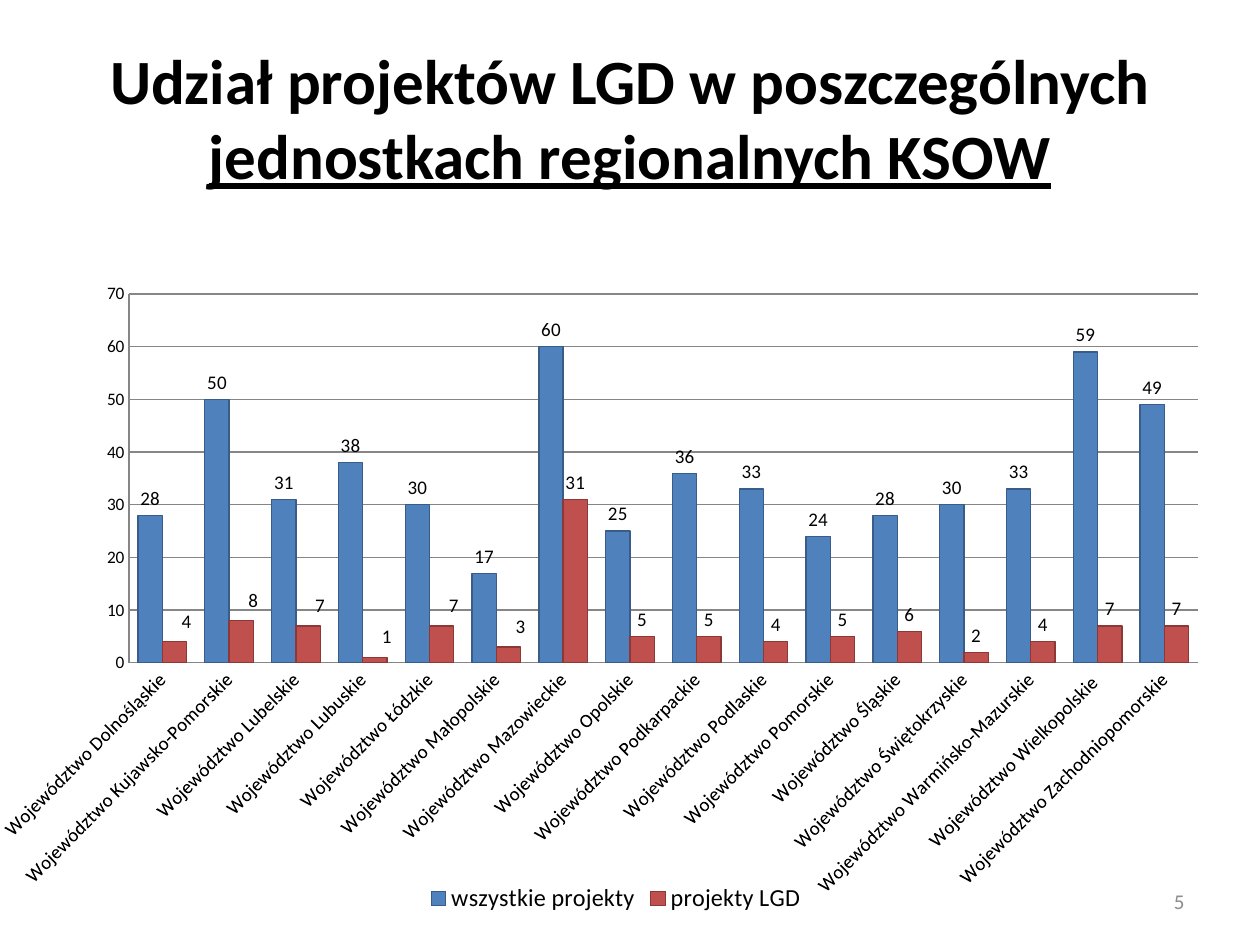
import pptx
import pptx.chart.data
import pptx.dml.color
import pptx.enum.chart
import pptx.enum.text
import pptx.oxml
import pptx.oxml.ns
import pptx.util

WIDTH, HEIGHT = 10, 7.5
FONT = "Calibri"
COLORS = {
    "text": "000000",
    "number": "8C8C8C",
    "grid": "868686",
    "all": "4F81BD",
    "all_edge": "385D8A",
    "lgd": "C0504D",
    "lgd_edge": "8C3836",
}
REGIONS = [
    "Dolnośląskie", "Kujawsko-Pomorskie", "Lubelskie", "Lubuskie",
    "Łódzkie", "Małopolskie", "Mazowieckie", "Opolskie",
    "Podkarpackie", "Podlaskie", "Pomorskie", "Śląskie",
    "Świętokrzyskie", "Warmińsko-Mazurskie", "Wielkopolskie ",
    "Zachodniopomorskie",
]
SERIES = [
    ("wszystkie projekty", "all",
     [28, 50, 31, 38, 30, 17, 60, 25, 36, 33, 24, 28, 30, 33, 59, 49]),
    ("projekty LGD", "lgd",
     [4, 8, 7, 1, 7, 3, 31, 5, 5, 4, 5, 6, 2, 4, 7, 7]),
]
SHIFTED_LABELS = 6


def color(name):
    return pptx.dml.color.RGBColor.from_string(COLORS[name])


def area(left, top, width, height):
    shares = (left * WIDTH, top * HEIGHT, width * WIDTH, height * HEIGHT)
    return [pptx.util.Inches(share) for share in shares]


def format_font(font, size, name="text"):
    font.name = FONT
    font.size = pptx.util.Pt(size)
    font.color.rgb = color(name)


def format_line(line, name):
    line.color.rgb = color(name)
    line.width = pptx.util.Pt(0.75)


def add_span(para, text, size, name="text", bold=False, underline=False):
    span = para.add_run()
    span.text = text
    format_font(span.font, size, name)
    span.font.bold = bold
    span.font.underline = underline


def add_title(page):
    title = page.shapes.title
    title.left, title.top, title.width, title.height = area(0.05, 0.04, 0.9, 0.167)
    title.text_frame.vertical_anchor = pptx.enum.text.MSO_ANCHOR.MIDDLE
    para = title.text_frame.paragraphs[0]
    para.alignment = pptx.enum.text.PP_ALIGN.CENTER
    add_span(para, "Udział projektów LGD w poszczególnych ", 36, bold=True)
    add_span(para, "jednostkach regionalnych KSOW", 36, bold=True, underline=True)


def add_page_number(page):
    box = page.shapes.add_textbox(*area(0.717, 0.927, 0.233, 0.053))
    box.text_frame.word_wrap = True
    box.text_frame.vertical_anchor = pptx.enum.text.MSO_ANCHOR.MIDDLE
    para = box.text_frame.paragraphs[0]
    para.alignment = pptx.enum.text.PP_ALIGN.RIGHT
    add_span(para, "5", 12, "number")


def make_layout(target=None, **values):
    parts = [f'<c:{tag} val="{value}"/>' for tag, value in values.items()]
    if target:
        parts.insert(0, f'<c:layoutTarget val="{target}"/>')
    return pptx.oxml.parse_xml(
        f'<c:layout {pptx.oxml.ns.nsdecls("c")}><c:manualLayout>'
        f'{"".join(parts)}</c:manualLayout></c:layout>'
    )


def place_plot(chart):
    plot_area = chart.element.xpath(".//c:plotArea")[0]
    for layout in plot_area.xpath("./c:layout"):
        plot_area.remove(layout)
    plot_area.insert(0, make_layout(
        "inner", xMode="edge", yMode="edge", x=0.094, y=0.101, w=0.891, h=0.531))


def format_axes(chart):
    for axis, size in ((chart.category_axis, 11), (chart.value_axis, 10)):
        axis.major_tick_mark = pptx.enum.chart.XL_TICK_MARK.NONE
        axis.minor_tick_mark = pptx.enum.chart.XL_TICK_MARK.NONE
        format_line(axis.format.line, "grid")
        format_font(axis.tick_labels.font, size)
    body = chart.category_axis._element.xpath("./c:txPr/a:bodyPr")[0]
    body.set("rot", "-2700000")
    body.set("vert", "horz")
    values = chart.value_axis
    values.minimum_scale, values.maximum_scale, values.major_unit = 0, 70, 10
    values.has_major_gridlines = True
    format_line(values.major_gridlines.format.line, "grid")


def format_series(series, name):
    series.invert_if_negative = False
    series.format.fill.solid()
    series.format.fill.fore_color.rgb = color(name)
    format_line(series.format.line, f"{name}_edge")
    labels = series.data_labels
    labels.show_value = True
    labels.position = pptx.enum.chart.XL_LABEL_POSITION.OUTSIDE_END
    format_font(labels.font, 11)


def shift_labels(series):
    for index in range(SHIFTED_LABELS):
        label = series.points[index].data_label
        format_font(label.font, 11)
        label.position = pptx.enum.chart.XL_LABEL_POSITION.OUTSIDE_END
    for element in series.data_labels._element.xpath("./c:dLbl"):
        element.insert(1, make_layout(x=0.01, y=-0.005))


def add_region_chart(page):
    chart_data = pptx.chart.data.CategoryChartData()
    chart_data.categories = [f"Województwo {region}" for region in REGIONS]
    for title, name, values in SERIES:
        chart_data.add_series(title, values)
    chart = page.shapes.add_chart(
        pptx.enum.chart.XL_CHART_TYPE.COLUMN_CLUSTERED,
        *area(0, 0.237, 0.965, 0.735), chart_data).chart
    chart.has_title = False
    format_font(chart.font, 10)
    place_plot(chart)
    format_axes(chart)
    plot = chart.plots[0]
    plot.gap_width = 75
    plot.overlap = 0
    plot.vary_by_categories = False
    for series, (title, name, values) in zip(plot.series, SERIES):
        format_series(series, name)
    shift_labels(plot.series[1])
    chart.has_legend = True
    chart.legend.position = pptx.enum.chart.XL_LEGEND_POSITION.BOTTOM
    chart.legend.include_in_layout = False
    format_font(chart.legend.font, 14)


def main():
    deck = pptx.Presentation()
    deck.slide_width = pptx.util.Inches(WIDTH)
    deck.slide_height = pptx.util.Inches(HEIGHT)
    page = deck.slides.add_slide(deck.slide_layouts[5])
    add_title(page)
    add_page_number(page)
    add_region_chart(page)
    deck.save("out.pptx")


if __name__ == "__main__":
    main()
